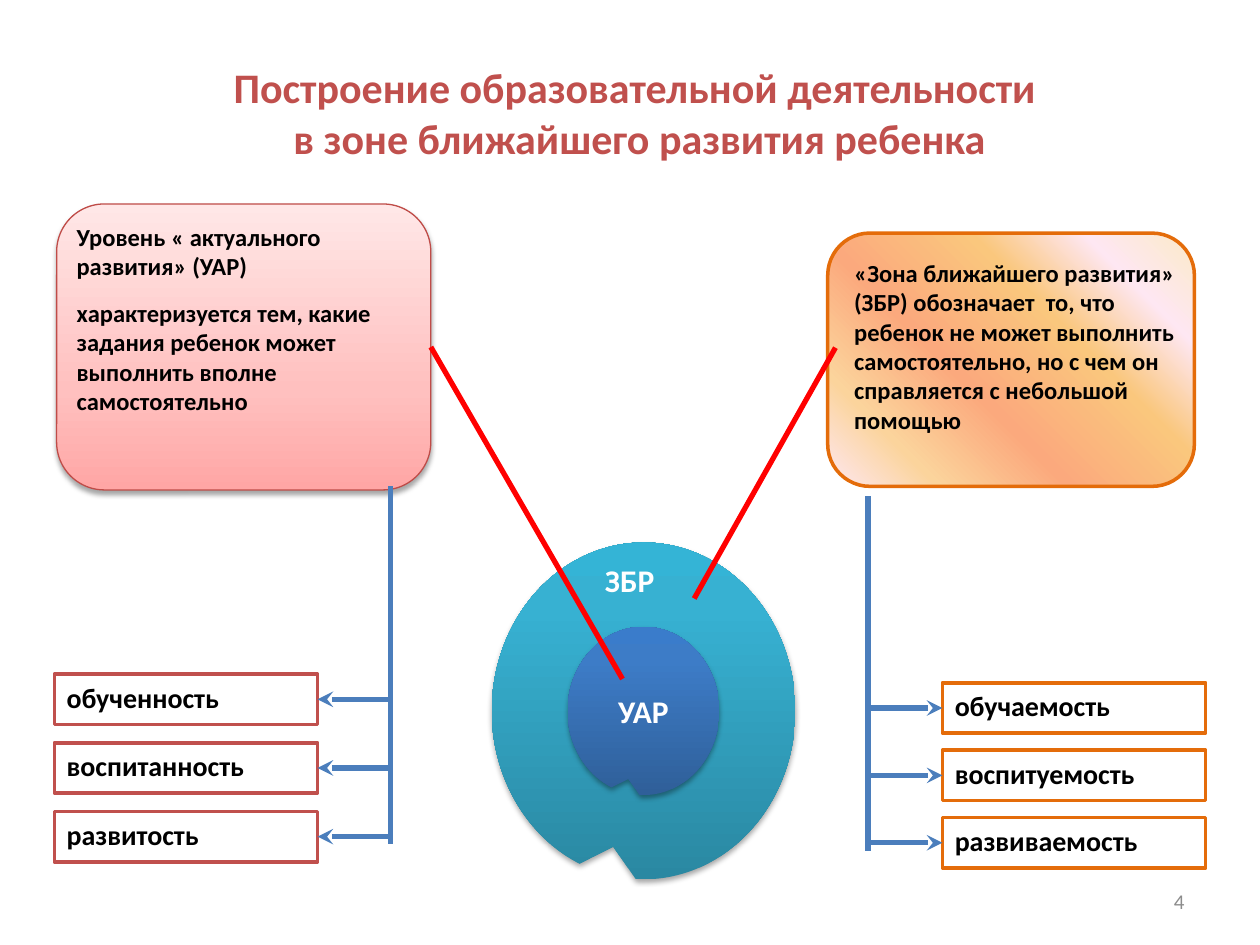
import pptx
import pptx.util
import pptx.dml.color
import pptx.enum.shapes
import pptx.enum.text
import pptx.oxml.ns
import lxml.etree

Pt = pptx.util.Pt
MSO_SHAPE = pptx.enum.shapes.MSO_SHAPE
ALIGN = pptx.enum.text.PP_ALIGN
ANCHOR = pptx.enum.text.MSO_ANCHOR
qn = pptx.oxml.ns.qn

COLORS = {
    "red": "C0504D", "orange": "E46C0A", "card_line": "BF4C48", "arrow": "4B7EBC",
    "pointer": "FF0000", "black": "000000", "white": "FFFFFF", "gray": "8C8C8C",
}
# Gradient stops in percent, and the counter-clockwise angle
GRADIENTS = {
    "actual": ([(0, "FFA6A5"), (35, "FFC0BF"), (100, "FFE7E7")], 90),
    "zone": ([(0, "FBEAC7"), (18, "FEE7F2"), (36, "FAC77D"), (61, "FBA97D"),
              (82, "FBD49C"), (100, "FEE7F2")], 225),
    "outer": ([(0, "2A88A2"), (80, "37B1D2"), (100, "34B4D6")], 90),
    "inner": ([(0, "2F5F99"), (80, "3D7CC7"), (100, "3A7CCB")], 90),
}
FONTS = {
    "title": {"size": Pt(24), "bold": True},
    "ring": {"size": Pt(18), "bold": True},
    "item": {"size": Pt(16), "bold": True},
    "card": {"size": Pt(14), "bold": True},
    "number": {"size": Pt(12), "bold": False},
}


def rgb(name):
    return pptx.dml.color.RGBColor.from_string(COLORS[name])


def add_color(parent, value):
    return lxml.etree.SubElement(parent, qn("a:srgbClr"), val=value)


def add_shadow(effects, opacity=35):
    shadow = lxml.etree.SubElement(
        effects, qn("a:outerShdw"), blurRad=str(Pt(3.1)), dist=str(Pt(1.8)),
        dir="5400000", rotWithShape="0")
    lxml.etree.SubElement(add_color(shadow, COLORS["black"]), qn("a:alpha"),
                          val=str(opacity * 1000))


def write(shape, lines, font, color, anchor=ANCHOR.TOP, align=ALIGN.LEFT,
          after=0, shadow=False):
    frame = shape.text_frame
    frame.text = "\n".join(lines)
    frame_format = {"word_wrap": True, "vertical_anchor": anchor,
                    "auto_size": pptx.enum.text.MSO_AUTO_SIZE.NONE}
    for name, value in frame_format.items():
        setattr(frame, name, value)
    for paragraph in frame.paragraphs:
        paragraph.alignment = align
        paragraph.space_after = Pt(after)
        for run in paragraph.runs:
            for name, value in {"name": "Calibri", **FONTS[font]}.items():
                setattr(run.font, name, value)
            run.font.color.rgb = rgb(color)
            if shadow:
                effects = lxml.etree.Element(qn("a:effectLst"))
                run.font.fill._xPr.find(qn("a:solidFill")).addnext(effects)
                add_shadow(effects)


def add_textbox(slide, left, top, width, height):
    return slide.shapes.add_textbox(Pt(left), Pt(top), Pt(width), Pt(height))


def add_shape(slide, kind, left, top, width, height, line=None, line_width=2,
              gradient=None, shadow=False):
    shape = slide.shapes.add_shape(kind, Pt(left), Pt(top), Pt(width), Pt(height))
    shape.shadow.inherit = False
    if gradient:
        stops, angle = GRADIENTS[gradient]
        shape.fill.gradient()
        shape.fill.gradient_angle = angle
        stop_list = next(shape._element.iter(qn("a:gsLst")))
        for stop in list(stop_list):
            stop_list.remove(stop)
        for position, value in stops:
            add_color(lxml.etree.SubElement(stop_list, qn("a:gs"),
                                            pos=str(position * 1000)), value)
    else:
        shape.fill.solid()
        shape.fill.fore_color.rgb = rgb("white")
    if line:
        shape.line.color.rgb = rgb(line)
        shape.line.width = Pt(line_width)
    else:
        shape.line.fill.background()
    if shadow:
        add_shadow(shape._element.spPr.find(qn("a:effectLst")))
    return shape


def add_line(slide, start, end, color, arrow=False):
    connector = slide.shapes.add_connector(
        pptx.enum.shapes.MSO_CONNECTOR.STRAIGHT, *map(Pt, start + end))
    connector.line.color.rgb = rgb(color)
    connector.line.width = Pt(3)
    if arrow:
        lxml.etree.SubElement(connector.line._get_or_add_ln(), qn("a:tailEnd"),
                              type="stealth")
    lxml.etree.SubElement(connector._element.spPr, qn("a:effectLst"))
    return connector


def add_title(slide, left, top, width, height):
    title = slide.shapes.title
    for name, value in {"left": left, "top": top, "width": width, "height": height}.items():
        setattr(title, name, Pt(value))
    write(title, ["Построение образовательной деятельности ",
                  "в зоне ближайшего развития ребенка"],
          "title", "red", align=ALIGN.CENTER)


def add_rings(slide, left, top, width, height):
    """Outer ring with an inner one of half its size in the middle."""
    inner_box = (left + width / 4, top + height / 4, width / 2, height / 2)
    for box, gradient in (((left, top, width, height), "outer"), (inner_box, "inner")):
        ring = add_shape(slide, MSO_SHAPE.OVAL_CALLOUT, *box, gradient=gradient, shadow=True)
        ring.adjustments[0], ring.adjustments[1] = -0.1, 0.403
    write(ring, ["УАР"], "ring", "white", ANCHOR.MIDDLE, ALIGN.CENTER)
    label = add_textbox(slide, left + 57.6, top + 7.2, 57.6, 28.8)
    write(label, ["ЗБР"], "ring", "white")


def add_card(slide, box, text_box, lines, margin_top=3.6, **look):
    card = add_shape(slide, MSO_SHAPE.ROUNDED_RECTANGLE, *box, **look)
    text = add_textbox(slide, *text_box)
    write(text, lines, "card", "black", after=10, shadow=True)
    text.text_frame.margin_top = Pt(margin_top)
    return card


def add_branch(slide, left, top, width, height, items, line, trunk_x, trunk_top, side):
    """Stack of boxes reached by arrows from a vertical trunk."""
    item_height = 28.8
    pitch = (height - item_height) / (len(items) - 1)
    edge = left + width if side == 3 else left
    add_line(slide, (trunk_x, trunk_top), (trunk_x, top + height - 10), "arrow")
    for index, item in enumerate(items):
        item_top = top + index * pitch
        rectangle = add_shape(slide, MSO_SHAPE.RECTANGLE, left, item_top, width,
                              item_height, line=line)
        write(rectangle, [item], "item", "black")
        middle = item_top + item_height / 2
        arrow = add_line(slide, (trunk_x, middle), (edge, middle), "arrow", arrow=True)
        arrow.end_connect(rectangle, side)


def add_number(slide, left, top, width, height):
    number = add_textbox(slide, left, top, width, height)
    write(number, ["4"], "number", "gray", ANCHOR.MIDDLE, ALIGN.RIGHT)


def main():
    presentation = pptx.Presentation()
    presentation.slide_width, presentation.slide_height = Pt(720), Pt(540)
    slide = presentation.slides.add_slide(presentation.slide_layouts[5])

    add_number(slide, 516, 500.5, 168, 28.8)
    add_title(slide, 65, 31.7, 601, 65.5)
    # Rings and the two explanations
    add_rings(slide, 281, 310, 173.5, 192.5)
    add_card(slide, (473, 133.2, 209.5, 144.7), (481, 116.6, 208, 151.2),
             ["«Зона ближайшего развития» (ЗБР) обозначает  то, что ребенок не может "
              "выполнить самостоятельно, но с чем он справляется с небольшой помощью"],
             margin_top=30.7, line="orange", gradient="zone")
    actual_card = add_card(
        slide, (32.4, 116.6, 213.8, 163.4), (36.7, 123.1, 208, 118),
        ["Уровень « актуального развития» (УАР)",
         "характеризуется тем, какие задания ребенок может выполнить вполне самостоятельно"],
        line="card_line", line_width=0.75, gradient="actual", shadow=True)
    # Outcomes below each explanation
    add_branch(slide, 31, 385.2, 150.5, 107.3,
               ["обученность", "воспитанность", "развитость"], "red", 223.2, 278, 3)
    add_branch(slide, 538.5, 390.2, 150.5, 105.8,
               ["обучаемость", "воспитуемость", "развиваемость"], "orange", 496, 283.7, 1)
    # Pointers from the explanations to the rings
    pointer = add_line(slide, (246.2, 198.3), (355.7, 388), "pointer")
    pointer.begin_connect(actual_card, 3)
    add_line(slide, (477.4, 198.7), (396.7, 342), "pointer")

    presentation.save("out.pptx")


if __name__ == "__main__":
    main()
